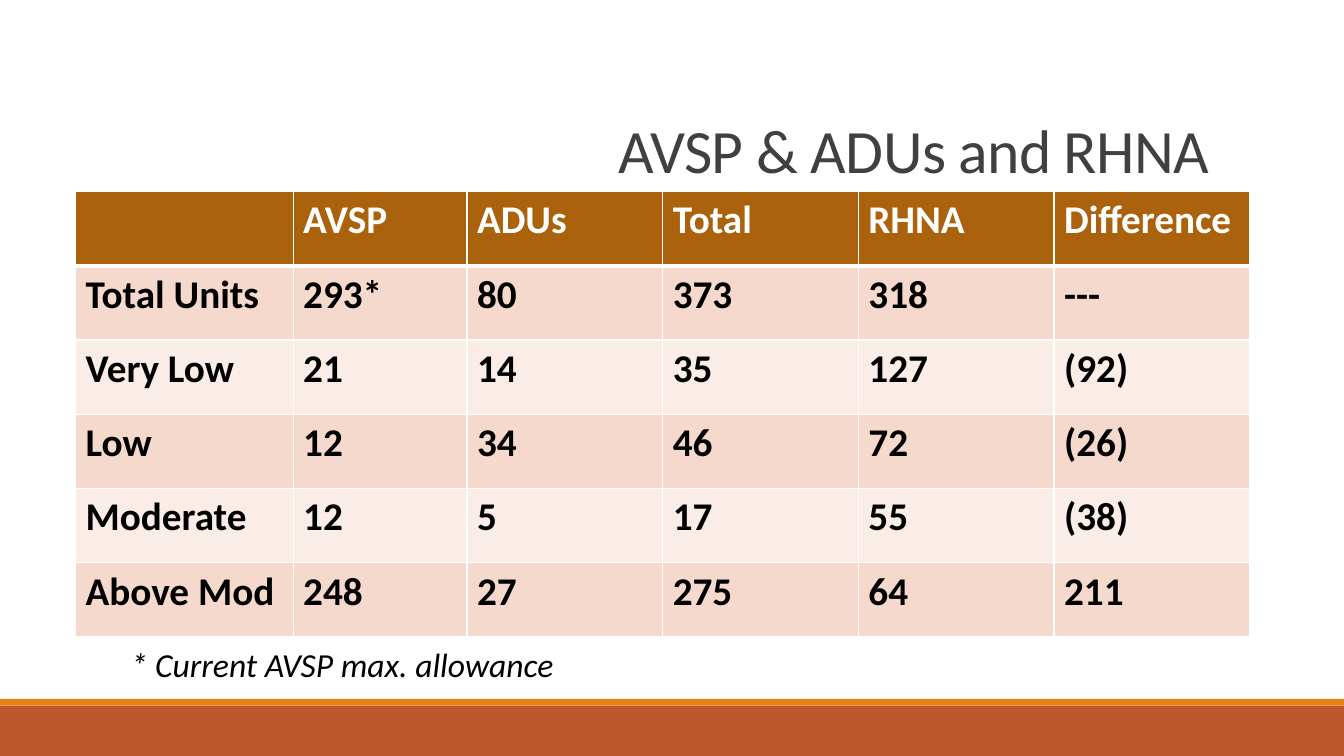
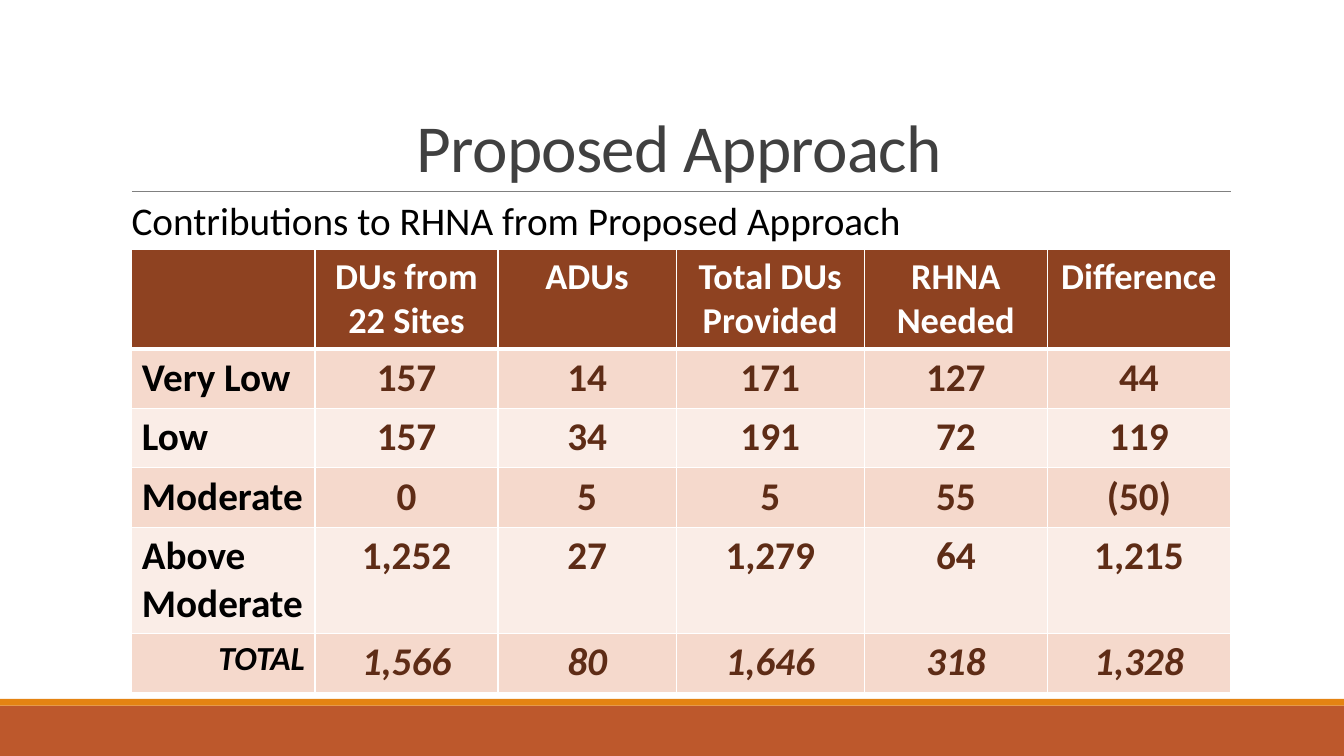
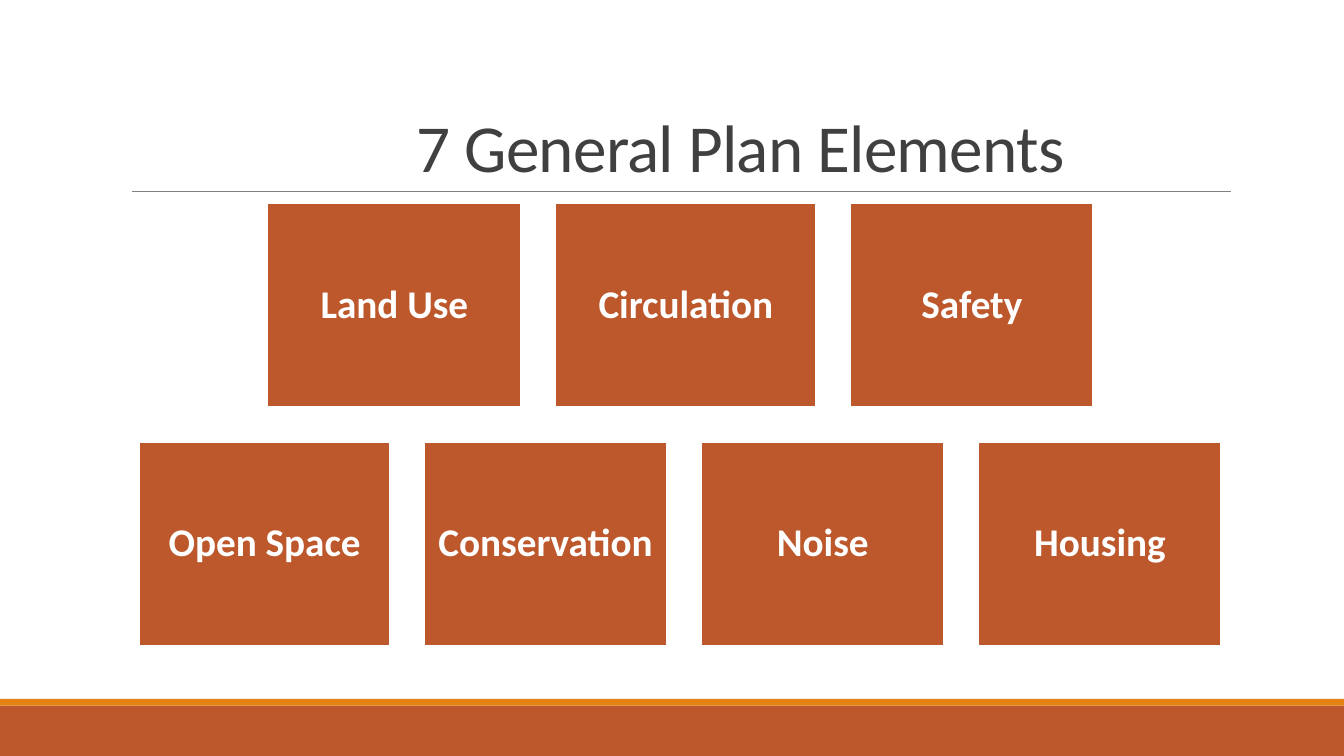
from itertools import accumulate

from lxml.etree import SubElement
from pptx import Presentation
from pptx.dml.color import RGBColor
from pptx.enum.shapes import MSO_CONNECTOR, MSO_SHAPE
from pptx.enum.text import MSO_ANCHOR, MSO_AUTO_SIZE, PP_ALIGN
from pptx.oxml import parse_xml
from pptx.oxml.ns import nsdecls, qn
from pptx.util import Emu, Inches, Pt

RUST = RGBColor(0xBD, 0x58, 0x2C)
ORANGE = RGBColor(0xE4, 0x83, 0x12)
OCHRE = RGBColor(0xAB, 0x62, 0x0D)
BROWN = RGBColor(0x8E, 0x42, 0x21)
DARK_BROWN = RGBColor(0x5E, 0x2C, 0x16)
PEACH = RGBColor(0xF5, 0xD9, 0xCC)
PALE = RGBColor(0xFA, 0xED, 0xE7)
CHARCOAL = RGBColor(0x40, 0x40, 0x40)
GRAY = RGBColor(0x80, 0x80, 0x80)
BLACK = RGBColor(0, 0, 0)
WHITE = RGBColor(0xFF, 0xFF, 0xFF)

LEFT, CENTER, RIGHT = PP_ALIGN.LEFT, PP_ALIGN.CENTER, PP_ALIGN.RIGHT


class Deck:
    """Slides in one style, measured on a grid of 160 columns by 90 rows."""

    FONT = "Calibri"
    COLS, ROWS = 160, 90
    RULE_ROW = 22.8

    def __init__(self):
        self.prs = Presentation()
        self.prs.slide_width, self.prs.slide_height = Emu(12192000), Emu(6858000)
        self.layout = self.prs.slide_layouts[5]
        self.s = None

    def grid(self, *lengths):
        unit = self.prs.slide_width / self.COLS
        return [Emu(round(n * unit)) for n in lengths]

    def style(self, p, size, color, bold=False, italic=False, align=LEFT):
        p.alignment = align
        f = p.font
        f.name, f.size, f.bold, f.italic = self.FONT, Pt(size), bold, italic
        f.color.rgb = color

    def slide(self, title, size=48, indent=0.1):
        first = self.s is None
        self.s = self.prs.slides.add_slide(self.layout)
        if first:
            self.furnish_layout()
        sp = self.s.shapes.title
        sp.left, sp.top, sp.width, sp.height = self.grid(48.4, 3.7, 98, 19.1)
        tf = sp.text_frame
        tf.text = title
        tf.word_wrap, tf.auto_size = True, MSO_AUTO_SIZE.NONE
        tf.vertical_anchor = MSO_ANCHOR.BOTTOM
        tf.margin_left = Inches(indent)
        p = tf.paragraphs[0]
        p.line_spacing = 0.85
        self.style(p, size, CHARCOAL)
        p._p.pPr.find(qn("a:defRPr")).set("spc", "-50")

    def furnish_layout(self):
        shared = [
            self.rect(0, 84, self.COLS, 6, RUST),
            self.rect(0, 83.2, self.COLS, 0.8, ORANGE),
            self.rule(15.7, 146.5, self.RULE_ROW),
        ]
        for sp in shared:
            self.layout.shapes.element.append(sp.element)

    def rect(self, x, y, w, h, fill):
        sp = self.s.shapes.add_shape(MSO_SHAPE.RECTANGLE, *self.grid(x, y, w, h))
        sp.shadow.inherit = False
        sp.fill.solid()
        sp.fill.fore_color.rgb = fill
        sp.line.fill.background()
        return sp

    def rule(self, x1, x2, y):
        line = self.s.shapes.add_connector(MSO_CONNECTOR.STRAIGHT, *self.grid(x1, y, x2, y))
        line.line.color.rgb, line.line.width = GRAY, Pt(0.5)
        SubElement(line.element.spPr, qn("a:effectLst"))
        return line

    def text(self, x, y, w, h, text, size, italic=False):
        tf = self.s.shapes.add_textbox(*self.grid(x, y, w, h)).text_frame
        tf.word_wrap = True
        tf.text = text
        self.style(tf.paragraphs[0], size, BLACK, italic=italic)

    def box_row(self, y, h, gap, center, boxes):
        widths = [w for _, w in boxes]
        start = center - (sum(widths) + gap * (len(boxes) - 1)) / 2
        lefts = accumulate((w + gap for w in widths), initial=start)
        for x, (label, w) in zip(lefts, boxes):
            sp = self.rect(x, y, w, h, RUST)
            sp.line.color.rgb, sp.line.width = WHITE, Pt(1.25)
            tf = sp.text_frame
            tf.word_wrap, tf.vertical_anchor = True, MSO_ANCHOR.MIDDLE
            tf.text = label
            tf.paragraphs[0].line_spacing = 0.9
            self.style(tf.paragraphs[0], 28, WHITE, bold=True, align=CENTER)

    def borders(self, cell, top, bottom):
        tcPr = cell._tc.get_or_add_tcPr()
        for i, (side, pts) in enumerate(zip("LRTB", (1, 1, top, bottom))):
            tcPr.insert(i, parse_xml(
                f'<a:ln{side} {nsdecls("a")} w="{Pt(pts)}"><a:solidFill>'
                f'<a:srgbClr val="{WHITE}"/></a:solidFill></a:ln{side}>'))

    def table(self, x, y, cols, rows, data, head_fill, head_size, color, align):
        frame = self.s.shapes.add_table(
            len(rows), len(cols), *self.grid(x, y, sum(cols), sum(rows)))
        tbl = frame.table
        for col, w in zip(tbl.columns, self.grid(*cols)):
            col.width = w
        for row, h in zip(tbl.rows, self.grid(*rows)):
            row.height = h
        for i, values in enumerate(data):
            for j, value in enumerate(values):
                cell = tbl.cell(i, j)
                cell.text = value
                cell.fill.solid()
                cell.fill.fore_color.rgb = (PEACH if i % 2 else PALE) if i else head_fill
                self.borders(cell, 3 if i == 1 else 1, 1 if i else 3)
                p = cell.text_frame.paragraphs[0]
                total = values[0] == "TOTAL"
                if i == 0:
                    self.style(p, head_size, WHITE, True, align=align)
                elif j == 0:
                    self.style(p, 24 if total else 28, BLACK, True, total,
                               RIGHT if total else LEFT)
                else:
                    self.style(p, 28, color, True, total, align)


def main():
    deck = Deck()

    deck.slide("AVSP & ADUs and RHNA", size=44, indent=2.1)
    deck.table(9, deck.RULE_ROW, [25.9, 20.7] + [23.3] * 4, [8.84] * 6, [
        ["", "AVSP", "ADUs", "Total", "RHNA", "Difference"],
        ["Total Units", "293*", "80", "373", "318", "---"],
        ["Very Low", "21", "14", "35", "127", "(92)"],
        ["Low", "12", "34", "46", "72", "(26)"],
        ["Moderate", "12", "5", "17", "55", "(38)"],
        ["Above Mod", "248", "27", "275", "64", "211"],
    ], OCHRE, 28, BLACK, LEFT)
    deck.text(14.4, 76.1, 53.8, 6, "* Current AVSP max. allowance", 24, italic=True)

    deck.slide("Proposed Approach")
    deck.table(15.7, 29.7, [21.8, 21.8, 21.2, 22.4, 21.8, 21.8],
               [11.6, 7.1, 7.1, 7.1, 12.5, 7.1], [
        ["", "DUs from 22 Sites", "ADUs", "Total DUs Provided", "RHNA Needed", "Difference"],
        ["Very Low", "157", "14", "171", "127", "44"],
        ["Low", "157", "34", "191", "72", "119"],
        ["Moderate", "0", "5", "5", "55", "(50)"],
        ["Above Moderate", "1,252", "27", "1,279", "64", "1,215"],
        ["TOTAL", "1,566", "80", "1,646", "318", "1,328"],
    ], BROWN, 26, DARK_BROWN, CENTER)
    deck.text(14.5, deck.RULE_ROW, 101, 6.9, "Contributions to RHNA from Proposed Approach", 28)

    deck.slide("7 General Plan Elements")
    top, height, gap, center = 24.2, 24.3, 4.1, 81
    box_rows = [
        [("Land Use", 30.2), ("Circulation", 31), ("Safety", 28.9)],
        [("Open Space", 29.8), ("Conservation", 28.9), ("Noise", 28.9), ("Housing", 28.9)],
    ]
    for i, boxes in enumerate(box_rows):
        deck.box_row(top + i * (height + gap), height, gap, center, boxes)

    deck.prs.save("out.pptx")


if __name__ == "__main__":
    main()
